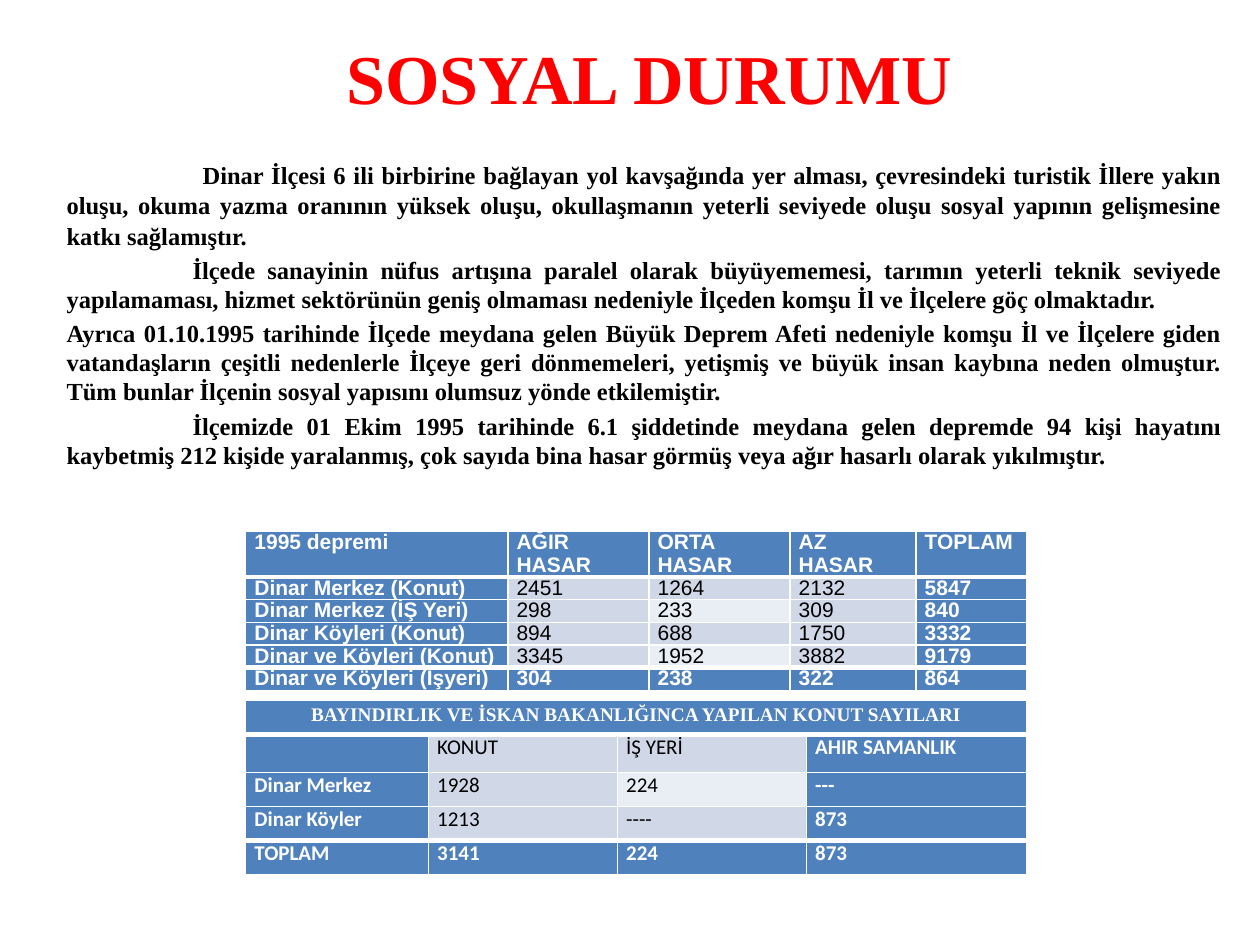
from lxml import etree
from pptx import Presentation, util as u
from pptx.dml.color import RGBColor
from pptx.enum import text as t
from pptx.oxml.ns import qn

BLUE, BAND, LIGHT, WHITE, BLACK = "4F81BD", "D0D8E8", "E9EDF4", "FFFFFF", "000000"
SERIF = "Times New Roman"


def rgb(value):
    return RGBColor.from_string(value)


def write(p, text, size, font, color, bold=True, align=t.PP_ALIGN.JUSTIFY):
    p.alignment = align
    r = p.add_run()
    r.text = text
    r.font.size, r.font.name, r.font.bold = u.Pt(size), font, bold
    r.font.color.rgb = rgb(color)


prs = Presentation()
prs.slide_width, prs.slide_height = W, H = u.Inches(10), u.Inches(7.5)
s = prs.slides.add_slide(prs.slide_layouts[5])

# Title
title = s.shapes.title
title.left, title.top = int(W * 0.09), int(H * 0.028)
title.width, title.height = int(W * 0.85), int(H * 0.105)
title.text_frame.vertical_anchor = t.MSO_ANCHOR.MIDDLE
write(title.text_frame.paragraphs[0], "SOSYAL DURUMU", 40, SERIF, "FF0000",
      align=t.PP_ALIGN.CENTER)

# Body: first-line indent in inches, line pitch in points, wording
body = [
    (1.08, 17.4, "Dinar İlçesi 6 ili birbirine bağlayan yol kavşağında yer alması, "
     "çevresindeki turistik İllere yakın oluşu, okuma yazma oranının yüksek oluşu, "
     "okullaşmanın yeterli seviyede oluşu sosyal yapının gelişmesine katkı sağlamıştır."),
    (1, 16.6, "İlçede sanayinin nüfus artışına paralel olarak büyüyememesi, tarımın "
     "yeterli teknik seviyede yapılamaması, hizmet sektörünün geniş olmaması nedeniyle "
     "İlçeden komşu İl ve İlçelere göç olmaktadır."),
    (0, 16.6, "Ayrıca 01.10.1995 tarihinde İlçede meydana gelen Büyük Deprem Afeti "
     "nedeniyle komşu İl ve İlçelere giden vatandaşların çeşitli nedenlerle İlçeye geri "
     "dönmemeleri, yetişmiş ve büyük insan kaybına neden olmuştur. Tüm bunlar İlçenin "
     "sosyal yapısını olumsuz yönde etkilemiştir."),
    (1, 16.6, "İlçemizde 01 Ekim 1995 tarihinde 6.1 şiddetinde meydana gelen depremde "
     "94 kişi hayatını kaybetmiş 212 kişide yaralanmış, çok sayıda bina hasar görmüş "
     "veya ağır hasarlı olarak yıkılmıştır."),
]
tf = s.shapes.add_textbox(int(W * 0.043), int(H * 0.112),
                          int(W * 0.937), int(H * 0.788)).text_frame
tf.word_wrap = True
tf.margin_top = u.Inches(0.42)
for i, (indent, pitch, text) in enumerate(body):
    p = tf.add_paragraph() if i else tf.paragraphs[0]
    p.line_spacing = u.Pt(pitch)
    p.space_before = u.Pt(3 if i else 0)
    p._p.get_or_add_pPr().set("indent", str(u.Inches(indent)))
    write(p, text, 14, SERIF, BLACK)

# Tables: top, column widths, row heights, font, line pitch, cells
damage = [
    ["1995 depremi", "AĞIR HASAR", "ORTA HASAR", "AZ HASAR", "TOPLAM"],
    ["Dinar Merkez (Konut)", "2451", "1264", "2132", "5847"],
    ["Dinar Merkez (İŞ Yeri)", "298", "233", "309", "840"],
    ["Dinar Köyleri (Konut)", "894", "688", "1750", "3332"],
    ["Dinar ve Köyleri (Konut)", "3345", "1952", "3882", "9179"],
    ["Dinar ve Köyleri (İşyeri)", "304", "238", "322", "864"],
]
housing = [
    ["BAYINDIRLIK VE İSKAN BAKANLIĞINCA YAPILAN KONUT SAYILARI", "", "", ""],
    ["", "KONUT", "İŞ YERİ", "AHIR SAMANLIK"],
    ["Dinar Merkez", "1928", "224", "---"],
    ["Dinar Köyler", "1213", "----", "873"],
    ["TOPLAM", "3141", "224", "873"],
]
tables = [
    (4.22, [2.08, 1.12, 1.12, 1, 0.88], [0.36] + [0.18] * 5, "Arial", 12.8, damage),
    (5.56, [1.45, 1.5, 1.5, 1.75], [0.27] * 5, "Calibri", 14.6, housing),
]
for top, widths, heights, font, pitch, rows in tables:
    last_row, last_col = len(rows) - 1, len(widths) - 1
    frame = s.shapes.add_table(len(rows), len(widths), int(W * 0.195), u.Inches(top),
                               u.Inches(sum(widths)), u.Inches(sum(heights)))
    table = frame.table
    for column, width in zip(table.columns, widths):
        column.width = u.Inches(width)
    for row, height in zip(table.rows, heights):
        row.height = u.Inches(height)
    for i, values in enumerate(rows):
        for j, value in enumerate(values):
            cell = table.cell(i, j)
            cell.margin_left = cell.margin_right = u.Inches(0.07)
            cell.margin_top = cell.margin_bottom = 0
            # Thick rules set off the first and the last row
            above = 3 if i in (1, last_row) else 1
            below = 3 if i in (0, last_row - 1) else 1
            for side, pt in zip("LRTB", (1, 1, above, below)):
                ln = etree.SubElement(cell._tc.get_or_add_tcPr(), qn(f"a:ln{side}"),
                                      w=str(u.Pt(pt)))
                fill = etree.SubElement(ln, qn("a:solidFill"))
                etree.SubElement(fill, qn("a:srgbClr"), val=WHITE)
            edge = i in (0, last_row) or j in (0, last_col)
            band = LIGHT if j == 2 and i % 2 == 0 else BAND
            cell.fill.solid()
            cell.fill.fore_color.rgb = rgb(BLUE if edge else band)
            p = cell.text_frame.paragraphs[0]
            p.line_spacing = u.Pt(pitch)
            if rows is housing and i == 0:
                if value:
                    write(p, value, 11, SERIF, WHITE, align=t.PP_ALIGN.CENTER)
            else:
                write(p, value, 12, font, WHITE if edge else BLACK, bold=edge)
    if rows is housing:
        table.cell(0, 0).merge(table.cell(0, last_col))

prs.save("out.pptx")
